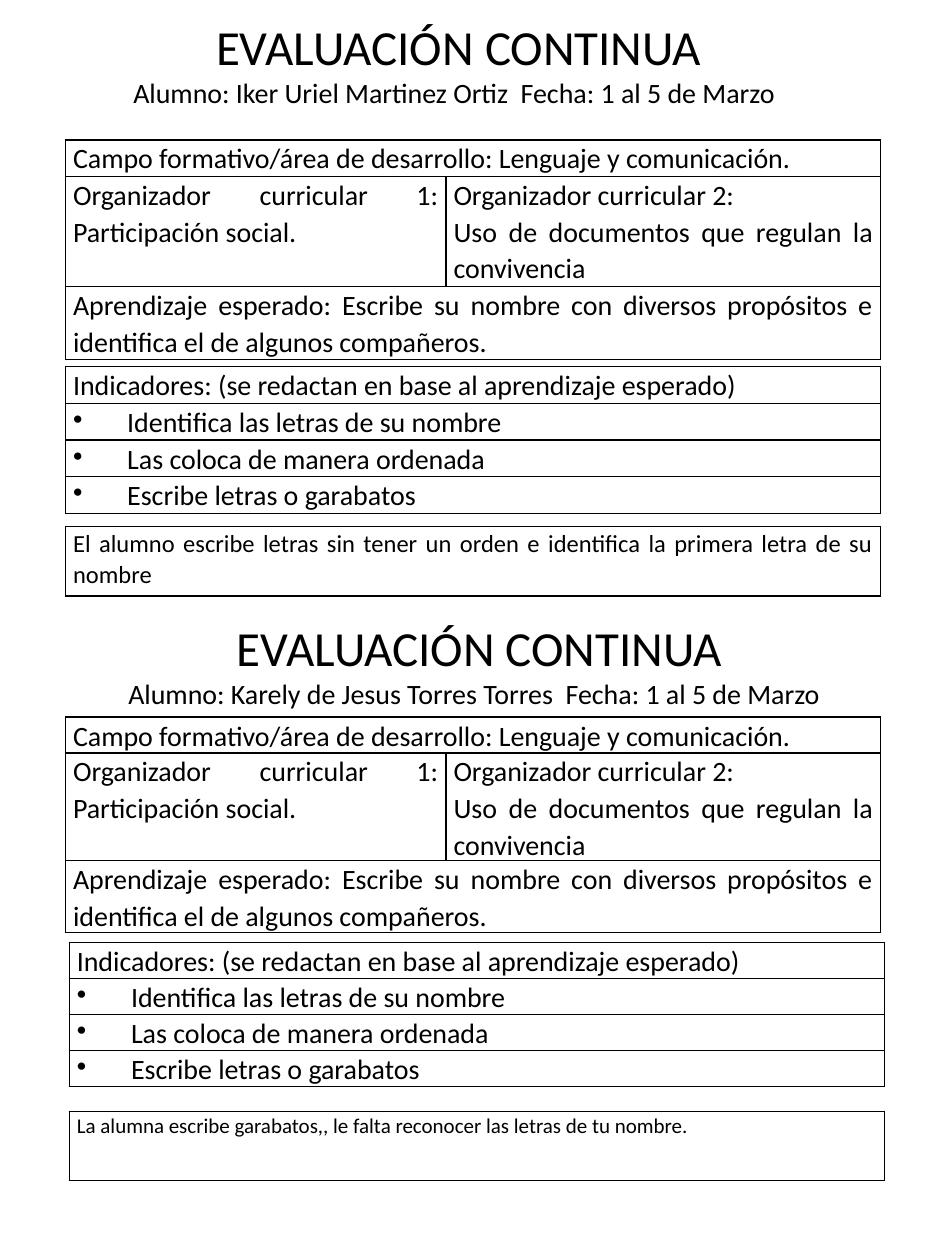
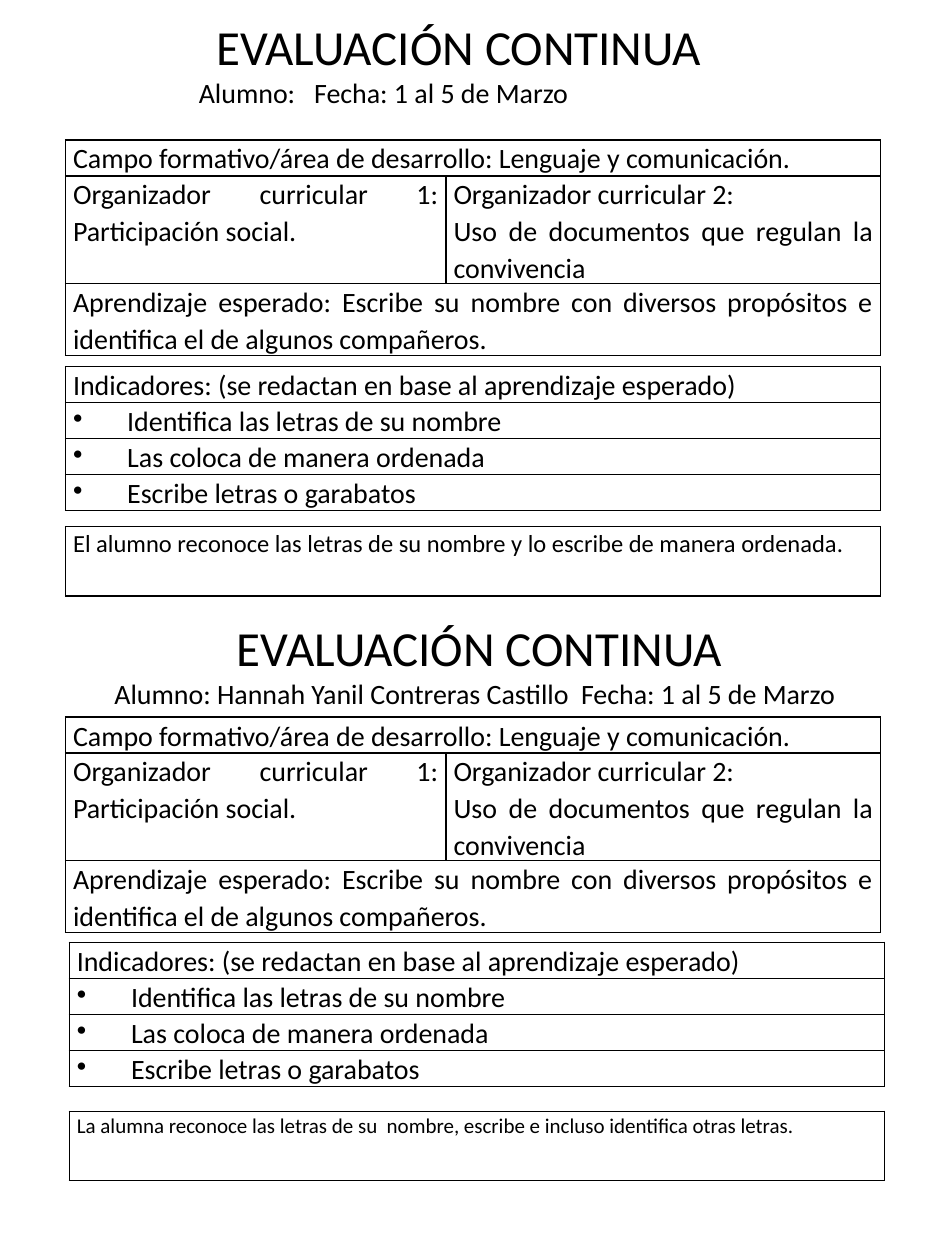
import pptx
import pptx.dml.color
import pptx.enum.text
import pptx.oxml
import pptx.oxml.ns
import pptx.util

Inches = pptx.util.Inches
Pt = pptx.util.Pt
ALIGN = pptx.enum.text.PP_ALIGN

BLACK = pptx.dml.color.RGBColor(0x00, 0x00, 0x00)
FONT = "Calibri"
TABLE_WIDTH = 6.47
BULLET_INDENT = 0.43
DATE = "Fecha: 1 al 5 de Marzo"

FIELD = "Campo formativo/área de desarrollo: Lenguaje y comunicación."
ORGANIZERS = [
    ["Organizador curricular 1: Participación social."],
    ["Organizador curricular 2:", "Uso de documentos que regulan la convivencia"],
]
LEARNING = ("Aprendizaje esperado: Escribe su nombre con diversos propósitos "
            "e identifica el de algunos compañeros.")
INDICATORS_TITLE = "Indicadores: (se redactan en base al aprendizaje esperado)"
INDICATORS = [
    "Identifica las letras de su nombre",
    "Las coloca de manera ordenada",
    "Escribe letras o garabatos",
]

UPPER = {"heading_top": 0.08, "field": (0.52, 1.11), "indicators": (0.52, 2.91),
         "note": (0.52, 4.18), "note_size": 14}
LOWER = {"heading_top": 4.85, "field": (0.52, 5.69), "indicators": (0.55, 7.48),
         "note": (0.55, 8.82), "note_size": 12}

PAGES = [
    [
        (UPPER, (0.96, 5.36), f"Alumno: Iker Uriel Martinez Ortiz  {DATE}",
         "El alumno escribe letras sin tener un orden e identifica "
         "la primera letra de su nombre"),
        (LOWER, (0.92, 5.77), f"Alumno: Karely de Jesus Torres Torres  {DATE}",
         "La alumna escribe garabatos,, le falta reconocer las letras de tu nombre."),
    ],
    [
        (UPPER, (1.48, 4.32), f"Alumno:   {DATE}",
         "El alumno reconoce las letras de su nombre y lo escribe de manera ordenada."),
        (LOWER, (0.81, 5.99), f"Alumno: Hannah Yanil Contreras Castillo  {DATE}",
         "La alumna reconoce las letras de su  nombre, escribe e incluso "
         "identifica otras letras."),
    ],
]


def write_text(para, text, *, size=16, align=ALIGN.JUSTIFY, spacing=None, bullet=False):
    """Write one formatted paragraph."""
    para.alignment = align
    if spacing:
        para.line_spacing = spacing
    if bullet:
        properties = para._p.get_or_add_pPr()
        properties.set("marL", str(Inches(BULLET_INDENT)))
        properties.set("indent", str(-Inches(BULLET_INDENT)))
        mark = pptx.oxml.parse_xml(
            f'<a:buChar {pptx.oxml.ns.nsdecls("a")} char="•"/>')
        properties.append(mark)
    span = para.add_run()
    span.text = text
    span.font.name = FONT
    span.font.size = Pt(size)
    span.font.color.rgb = BLACK


def fill_cell(cell, lines, **style):
    """Write the lines of a cell as paragraphs."""
    for index, line in enumerate(lines):
        frame = cell.text_frame
        para = frame.add_paragraph() if index else frame.paragraphs[0]
        write_text(para, line, spacing=1.07, **style)


def style_cell(cell):
    """Give a cell its margins, black borders and no fill."""
    cell.margin_left = cell.margin_right = Inches(0.06)
    cell.margin_top = cell.margin_bottom = 0
    properties = cell._tc.get_or_add_tcPr()
    for side in "LRTB":
        properties.append(pptx.oxml.parse_xml(
            f'<a:ln{side} {pptx.oxml.ns.nsdecls("a")} w="{Pt(1)}"><a:solidFill>'
            f'<a:srgbClr val="{BLACK}"/></a:solidFill></a:ln{side}>'))
    cell.fill.background()


def add_grid(page, place, height, row_height, row_count, widths):
    """Add a plain bordered table and return it."""
    left, top = place
    box = page.shapes.add_table(row_count, len(widths), Inches(left), Inches(top),
                                Inches(sum(widths)), Inches(height))
    table = box.table
    table.first_row = table.horz_banding = False
    for column, width in zip(table.columns, widths):
        column.width = Inches(width)
    for row in table.rows:
        row.height = Inches(row_height)
    box.height = Inches(height)
    for cell in table.iter_cells():
        style_cell(cell)
    return table


def add_field_table(page, place):
    """Add the table of field, organizers and expected learning."""
    table = add_grid(page, place, 1.67, 0.17, 3, [3.02, 3.45])
    for row, text in ((0, FIELD), (2, LEARNING)):
        table.cell(row, 0).merge(table.cell(row, 1))
        fill_cell(table.cell(row, 0), [text])
    for column, lines in enumerate(ORGANIZERS):
        fill_cell(table.cell(1, column), lines)


def add_indicator_table(page, place):
    """Add the table of indicators."""
    table = add_grid(page, place, 1.09, 0.18, len(INDICATORS) + 1, [TABLE_WIDTH])
    fill_cell(table.cell(0, 0), [INDICATORS_TITLE])
    for row, text in enumerate(INDICATORS, 1):
        fill_cell(table.cell(row, 0), [text], bullet=True)


def add_note(page, place, text, size):
    """Add the one-cell table with the remark on the pupil."""
    table = add_grid(page, place, 0.55, 0.55, 1, [TABLE_WIDTH])
    fill_cell(table.cell(0, 0), [text], size=size)


def add_heading(page, left, top, width, pupil):
    """Add the title and the line with pupil and date."""
    box = page.shapes.add_textbox(Inches(left), Inches(top), Inches(width), Inches(1.14))
    frame = box.text_frame
    frame.word_wrap = True
    write_text(frame.paragraphs[0], "EVALUACIÓN CONTINUA", size=28, align=ALIGN.CENTER)
    write_text(frame.add_paragraph(), pupil, align=ALIGN.LEFT)


def add_evaluation(page, layout, heading, pupil, note):
    """Add one pupil's evaluation to half a page."""
    left, width = heading
    add_field_table(page, layout["field"])
    add_indicator_table(page, layout["indicators"])
    add_note(page, layout["note"], note, layout["note_size"])
    add_heading(page, left, layout["heading_top"], width, pupil)


def main():
    """Build and save the deck."""
    deck = pptx.Presentation()
    deck.slide_width = Inches(7.5)
    deck.slide_height = Inches(10)
    for evaluations in PAGES:
        page = deck.slides.add_slide(deck.slide_layouts[6])
        for evaluation in evaluations:
            add_evaluation(page, *evaluation)
    deck.save("out.pptx")


if __name__ == "__main__":
    main()
